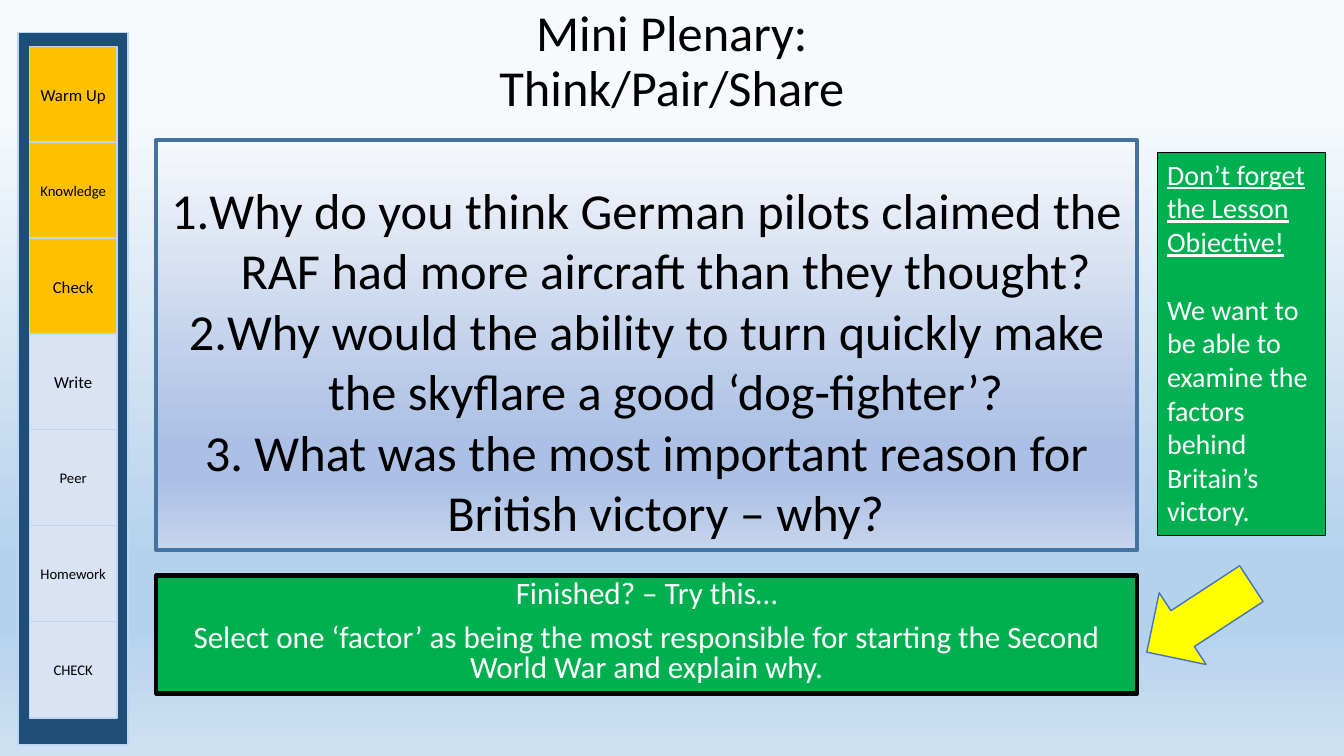
from dataclasses import dataclass, field
from typing import Any

from lxml.etree import SubElement
from pptx import Presentation
from pptx.dml.color import RGBColor as Rgb
from pptx.enum.shapes import MSO_SHAPE as Form
from pptx.enum.text import MSO_ANCHOR as Anchor, MSO_AUTO_SIZE as Auto, PP_ALIGN as Align
from pptx.oxml.ns import qn
from pptx.util import Inches, Pt

Stops = list[tuple[int, str]]


@dataclass(frozen=True)
class Theme:
    font: str = "Calibri"
    black: str = "000000"
    white: str = "FFFFFF"
    navy: str = "1F4E79"
    pale: str = "BDD7EE"
    gold: str = "FFC000"
    mist: str = "DAE3F3"
    green: str = "00B050"
    steel: str = "43739E"
    yellow: str = "FFFF00"
    blue: str = "4472C4"
    large: float = 36
    task: float = 22.2
    note: float = 20
    step: float = 12
    small: float = 10.5


T = Theme()
SKY: Stops = [(14, "F7FAFD"), (74, "B5D2EC"), (83, "B5D2EC"), (100, "CEE1F2")]
HAZE: Stops = [(0, "F6F8FC"), (74, "ABC0E4"), (83, "ABC0E4"), (100, "C7D5ED")]


@dataclass
class Box:
    """A shape placed by percentages of the slide: left, top, width, height."""
    area: tuple[float, float, float, float]
    fill: str | Stops | None = None
    edge: tuple[str, float] | None = None
    lines: list[str] = field(default_factory=list)
    size: float = T.step
    ink: str = T.black
    form: Form = Form.RECTANGLE
    turn: float = 0
    frame: dict[str, Any] = field(default_factory=dict)
    para: dict[str, Any] = field(default_factory=dict)
    gap: float = 0
    count: bool = False
    under: bool = False


def apply(item: Any, values: dict[str, Any]) -> None:
    for name, value in values.items():
        setattr(item, name, value)


def blend(fill: Any, root: Any, stops: Stops) -> None:
    """Give a top-to-bottom gradient with any number of stops."""
    fill.gradient()
    fill.gradient_angle = 270
    group = root.xpath(".//a:gsLst")[0]
    group.clear()
    for share, tint in stops:
        stop = SubElement(group, qn("a:gs"), pos=str(share * 1000))
        SubElement(stop, qn("a:srgbClr"), val=tint)


def write(text: Any, box: Box) -> None:
    apply(text, {"word_wrap": True, "vertical_anchor": Anchor.MIDDLE} | box.frame)
    for row, line in enumerate(box.lines):
        para = text.add_paragraph() if row else text.paragraphs[0]
        para.text = line
        if box.count:
            props = para._p.get_or_add_pPr()
            apart = Inches(0.38)
            props.set("marL", str(apart))
            props.set("indent", str(-apart))
            SubElement(props, qn("a:buAutoNum"), type="arabicPeriod")
        apply(para, {"alignment": Align.CENTER} | box.para)
        if row and box.gap:
            para.space_before = Pt(box.gap)
        for run in para.runs:
            apply(run.font, {"name": T.font, "size": Pt(box.size),
                             "underline": box.under and row == 0})
            run.font.color.rgb = Rgb.from_string(box.ink)


def draw(box: Box) -> None:
    left, top, wide, high = box.area
    spot = [int(deck.slide_width * left / 100), int(deck.slide_height * top / 100),
            int(deck.slide_width * wide / 100), int(deck.slide_height * high / 100)]
    if box.fill is None:
        shape = slide.shapes.add_textbox(*spot)
    else:
        shape = slide.shapes.add_shape(box.form, *spot)
        shape.shadow.inherit = False
        shape.rotation = box.turn
        if isinstance(box.fill, str):
            shape.fill.solid()
            shape.fill.fore_color.rgb = Rgb.from_string(box.fill)
        else:
            blend(shape.fill, shape._element, box.fill)
    if box.edge:
        tint, width = box.edge
        shape.line.color.rgb = Rgb.from_string(tint)
        shape.line.width = Pt(width)
    if box.lines:
        write(shape.text_frame, box)


deck = Presentation()
apply(deck, {"slide_width": Inches(13.33), "slide_height": Inches(7.5)})
slide = deck.slides.add_slide(deck.slide_layouts[6])
blend(slide.background.fill, slide._element, SKY)

# Rail and heading
draw(Box((1.35, 4.27, 8.18, 94.27), T.navy, (T.pale, 1)))
draw(Box((12.5, 6.93, 75, 9.2), lines=["Mini Plenary:\vThink/Pair/Share"], size=T.large,
         frame={"vertical_anchor": Anchor.BOTTOM}, para={"line_spacing": 0.9}))

# Extra task and main questions share one column
LEFT, WIDE = 11.63, 72.98
draw(Box((LEFT, 76.13, WIDE, 15.6), T.green, (T.black, 3),
         ["Finished? – Try this…",
          "Select one ‘factor’ as being the most responsible for starting "
          "the Second World War and explain why."],
         T.task, T.white, frame={"vertical_anchor": Anchor.TOP},
         para={"line_spacing": 0.8}, gap=10))
draw(Box((LEFT, 18.53, WIDE, 54.27), HAZE, (T.steel, 3),
         ["Why do you think German pilots claimed the RAF had more aircraft than they thought?",
          "Why would the ability to turn quickly make the skyflare a good ‘dog-fighter’?",
          " What was the most important reason for British victory – why?"],
         T.large, frame={"margin_top": Inches(0.35)}, count=True))

# Lesson steps down the rail
STEPS = [("Warm Up", T.step), ("Knowledge", T.small), ("Check", T.step), ("Write", T.step),
         ("Peer", T.small), ("Homework", T.small), ("CHECK", T.small)]
DONE, PITCH = 3, 12.68
for row, (name, size) in enumerate(STEPS):
    draw(Box((2.18, 6.13 + row * PITCH, 6.53, 12.8), T.gold if row < DONE else T.mist,
             (T.pale, 1), [name], size,
             frame={"margin_left": Inches(0.05), "margin_right": Inches(0.05)}))

# Objective and arrow
draw(Box((86.1, 20.13, 12.53, 50.67), T.green, (T.black, 0.75),
         ["Don’t forget the Lesson Objective!",
          "We want to be able to examine the factors behind Britain’s victory."],
         T.note, T.white, para={"alignment": Align.LEFT}, gap=24.4, under=True,
         frame={"vertical_anchor": Anchor.TOP, "auto_size": Auto.SHAPE_TO_FIT_TEXT}))
draw(Box((86.03, 73.47, 6.38, 16.53), T.yellow, (T.blue, 1),
         form=Form.DOWN_ARROW, turn=56.8))

deck.save("out.pptx")
